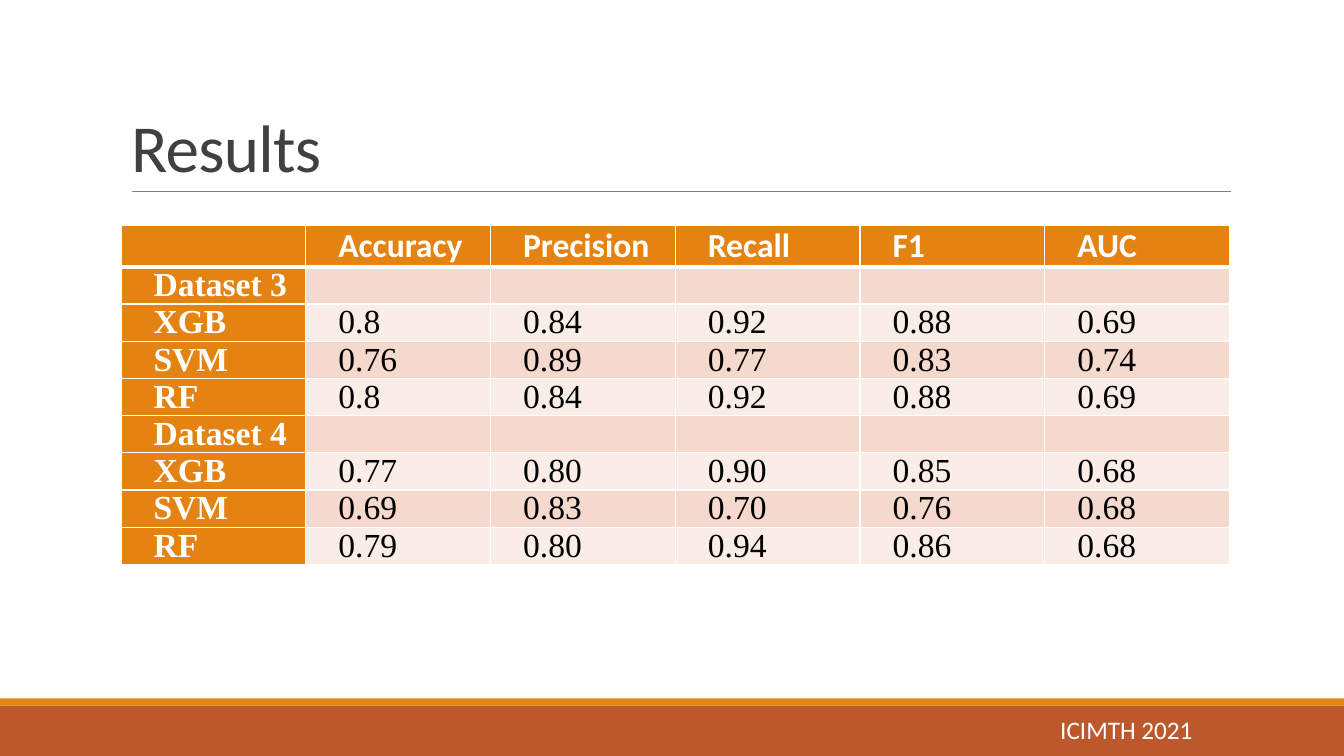
from lxml.etree import SubElement
from pptx import Presentation
from pptx.dml.color import RGBColor
from pptx.enum.shapes import MSO_CONNECTOR, MSO_SHAPE
from pptx.enum.text import MSO_ANCHOR, MSO_AUTO_SIZE, PP_ALIGN
from pptx.oxml import parse_xml
from pptx.oxml.ns import nsdecls, qn
from pptx.util import Cm, Pt

ORANGE, RUST, WHITE = "E48312", "BD582C", "FFFFFF"
BANDS = ("F5D9CC", "FAEDE7")
RESULTS = [
    ["", "Accuracy", "Precision", "Recall", "F1", "AUC"],
    ["Dataset 3", "", "", "", "", ""],
    ["XGB", "0.8", "0.84", "0.92", "0.88", "0.69"],
    ["SVM", "0.76", "0.89", "0.77", "0.83", "0.74"],
    ["RF", "0.8", "0.84", "0.92", "0.88", "0.69"],
    ["Dataset 4", "", "", "", "", ""],
    ["XGB", "0.77", "0.80", "0.90", "0.85", "0.68"],
    ["SVM", "0.69", "0.83", "0.70", "0.76", "0.68"],
    ["RF", "0.79", "0.80", "0.94", "0.86", "0.68"],
]


def color(value):
    """Turn a hex string into a colour."""
    return RGBColor.from_string(value)


def format_paragraph(paragraph, size, fill, name="Calibri", bold=False):
    """Set the font of a whole paragraph."""
    font = paragraph.font
    font.size, font.name, font.bold = Pt(size), name, bold
    font.color.rgb = color(fill)


def add_band(slide, top, height, fill):
    """Add a full-width band without outline."""
    band = slide.shapes.add_shape(MSO_SHAPE.RECTANGLE, 0, Cm(top), Cm(33.87), Cm(height))
    band.shadow.inherit = False
    band.fill.solid()
    band.fill.fore_color.rgb = color(fill)
    band.line.fill.background()


def add_rule(slide, left, right, top):
    """Add the thin grey rule below the title."""
    rule = slide.shapes.add_connector(
        MSO_CONNECTOR.STRAIGHT, Cm(left), Cm(top), Cm(right), Cm(top))
    rule.line.color.rgb = color("808080")
    rule.line.width = Pt(0.5)
    SubElement(rule._element.spPr, qn("a:effectLst"))


def set_title(slide, text):
    """Place and format the title placeholder."""
    title = slide.shapes.title
    title.left, title.top, title.width, title.height = Cm(3.05), Cm(0.79), Cm(27.94), Cm(4.04)
    frame = title.text_frame
    frame.text = text
    frame.auto_size = MSO_AUTO_SIZE.NONE
    frame.vertical_anchor = MSO_ANCHOR.BOTTOM
    paragraph = frame.paragraphs[0]
    paragraph.alignment = PP_ALIGN.LEFT
    paragraph.line_spacing = 0.85
    format_paragraph(paragraph, 48, "404040")
    paragraph.font._element.set("spc", "-50")


def add_label(slide, text, left, top, width, height):
    """Add the white event label in the footer."""
    frame = slide.shapes.add_textbox(Cm(left), Cm(top), Cm(width), Cm(height)).text_frame
    frame.word_wrap = True
    frame.text = text
    format_paragraph(frame.paragraphs[0], 18, WHITE)


def set_borders(cell, top, bottom):
    """Give a cell white borders, with top and bottom widths in points."""
    properties = cell._tc.get_or_add_tcPr()
    for index, (side, width) in enumerate((("L", 1), ("R", 1), ("T", top), ("B", bottom))):
        properties.insert(index, parse_xml(
            f'<a:ln{side} {nsdecls("a")} w="{Pt(width)}"><a:solidFill>'
            f'<a:srgbClr val="{WHITE}"/></a:solidFill></a:ln{side}>'))


def fill_cell(cell, text, row, column):
    """Write and format one table cell by its place."""
    heading = row == 0 or column == 0
    cell.fill.solid()
    cell.fill.fore_color.rgb = color(ORANGE if heading else BANDS[(row - 1) % 2])
    set_borders(cell, 3 if row == 1 else 1, 3 if row == 0 else 1)
    cell.margin_left = cell.margin_right = Cm(0.18)
    cell.margin_top = cell.margin_bottom = 0
    cell.vertical_anchor = MSO_ANCHOR.BOTTOM
    cell.text = text
    paragraph = cell.text_frame.paragraphs[0]
    paragraph.alignment = PP_ALIGN.JUSTIFY
    paragraph._p.get_or_add_pPr().set("indent", str(Cm(0.64)))
    name = "Calibri" if row == 0 else "Times New Roman"
    format_paragraph(paragraph, 24, WHITE if heading else "000000", name, heading)


def add_results(slide, left, top, width):
    """Add the table of scores."""
    table = slide.shapes.add_table(
        len(RESULTS), len(RESULTS[0]), Cm(left), Cm(top), Cm(width), Cm(8.5)).table
    table.first_row = table.horz_banding = False
    for row, values in enumerate(RESULTS):
        table.rows[row].height = Cm(1.03 if row == 0 else 0.93)
        for column, text in enumerate(values):
            fill_cell(table.cell(row, column), text, row, column)


def main():
    """Build and save the slide."""
    presentation = Presentation()
    presentation.slide_width, presentation.slide_height = Cm(33.87), Cm(19.05)
    slide = presentation.slides.add_slide(presentation.slide_layouts[5])
    add_band(slide, 17.78, 1.27, RUST)
    add_band(slide, 17.6, 0.18, ORANGE)
    add_rule(slide, 3.33, 31.01, 4.83)
    set_title(slide, "Results")
    add_results(slide, 3.05, 5.69, 27.94)
    add_label(slide, "ICIMTH 2021", 26.47, 17.88, 6.76, 1.02)
    presentation.save("out.pptx")


if __name__ == "__main__":
    main()
